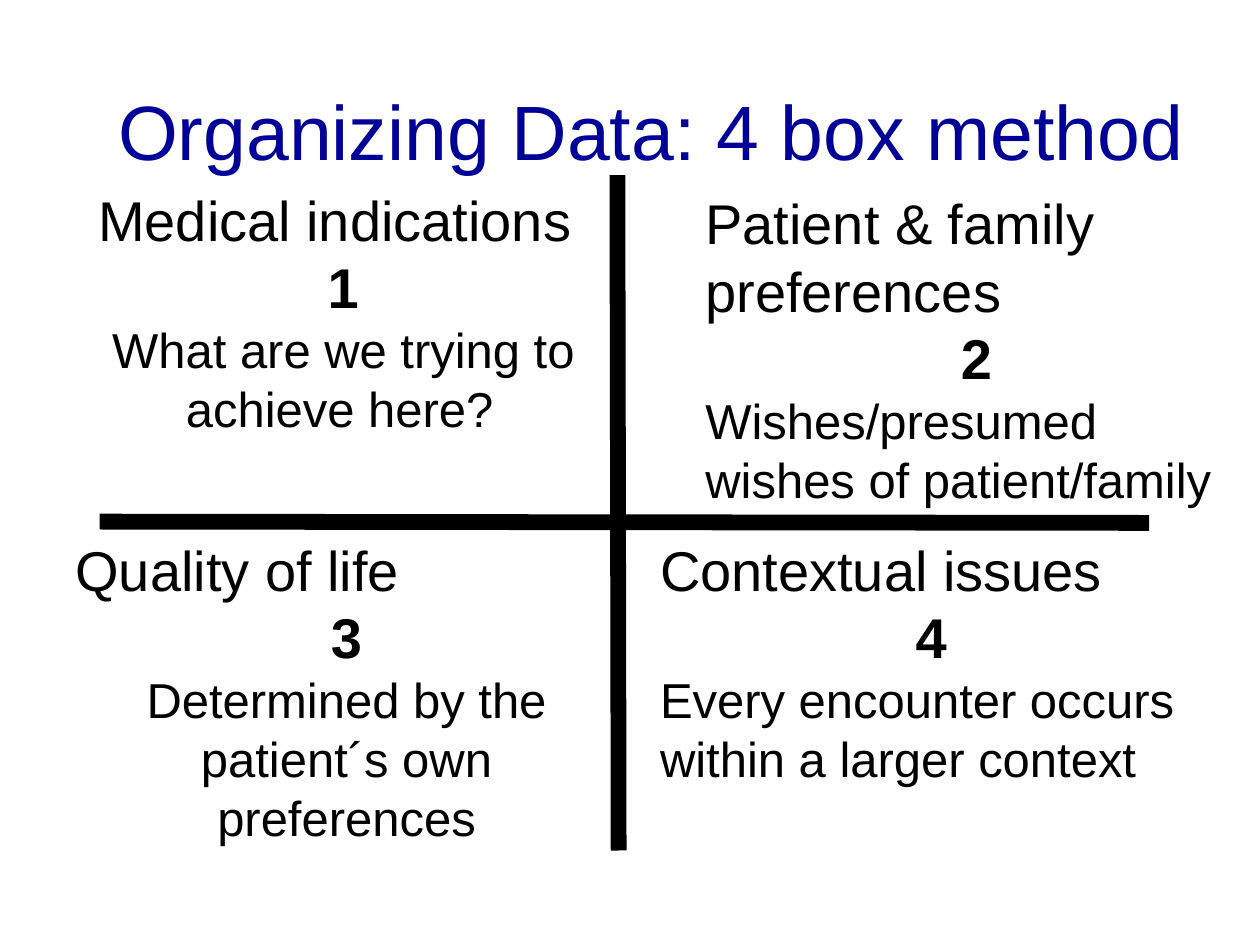
from pptx import Presentation
from pptx.dml.color import RGBColor
from pptx.enum.shapes import MSO_CONNECTOR
from pptx.enum.text import MSO_ANCHOR, PP_ALIGN
from pptx.oxml.ns import qn
from pptx.util import Emu, Pt
from lxml import etree

PX = 9144  # 100 px to the inch
FONT = "Arial"
COLORS = {"text": "000000", "title": "000099", "cross": "000000"}
STRAIGHT = MSO_CONNECTOR.STRAIGHT
LEFT, CENTER = PP_ALIGN.LEFT, PP_ALIGN.CENTER
TOP, MIDDLE = MSO_ANCHOR.TOP, MSO_ANCHOR.MIDDLE
INDENT = 50


def px(value):
    return Emu(value * PX)


def add_text_box(page, bounds, anchor=TOP):
    frame = page.shapes.add_textbox(*map(px, bounds)).text_frame
    frame.word_wrap = True
    frame.vertical_anchor = anchor
    return frame


def add_span(para, text, size, color="text", bold=False):
    span = para.add_run()
    span.text = text
    span.font.name = FONT
    span.font.size = Pt(size)
    span.font.bold = bold
    span.font.color.rgb = RGBColor.from_string(COLORS[color])


def add_title(page, bounds, text):
    para = add_text_box(page, bounds, MIDDLE).paragraphs[0]
    para.alignment = CENTER
    add_span(para, text, 44, "title")


def add_bar(page, start, end):
    bar = page.shapes.add_connector(STRAIGHT, *map(px, start + end))
    bar.line.width = Pt(9)
    bar.line.color.rgb = RGBColor.from_string(COLORS["cross"])
    etree.SubElement(bar._element.spPr, qn("a:effectLst"))


def add_quadrant(page, bounds, heading, number, detail,
                 detail_align=LEFT, indent=INDENT, tail=""):
    frame = add_text_box(page, bounds)
    lines = [
        (heading, 32, False, LEFT),
        (number, 32, True, CENTER),
        (detail, 28, False, detail_align),
    ]
    for index, (text, size, bold, align) in enumerate(lines):
        para = frame.add_paragraph() if index else frame.paragraphs[0]
        para.alignment = align
        if indent:
            para.level = 1
            props = para._p.get_or_add_pPr()
            props.set("marL", str(px(indent)))
            props.set("indent", "0")
        add_span(para, text, size, bold=bold)
    if tail:
        add_span(para, tail, 24)


def build_page(page):
    # Cross that divides the four boxes
    add_bar(page, (490, 139), (491, 675))
    add_bar(page, (79, 414), (912, 415))

    # Four boxes
    add_quadrant(page, (68, 142, 409, 212), "Medical indications", "1",
                 "What are we trying to achieve here?",
                 CENTER, indent=0, tail="\t")
    add_quadrant(page, (0, 420, 500, 259), "Quality of life", "3",
                 "Determined by the patient´s own preferences", CENTER)
    add_quadrant(page, (464, 420, 500, 212), "Contextual issues", "4",
                 "Every encounter occurs within a larger context")
    add_quadrant(page, (500, 145, 500, 266), "Patient & family preferences",
                 "2", "Wishes/presumed wishes of patient/family")

    # Title
    add_title(page, (42, 28, 950, 150), "Organizing Data: 4 box method")


def main():
    deck = Presentation()
    deck.slide_width, deck.slide_height = px(1000), px(750)
    build_page(deck.slides.add_slide(deck.slide_layouts[6]))
    deck.save("out.pptx")


if __name__ == "__main__":
    main()
